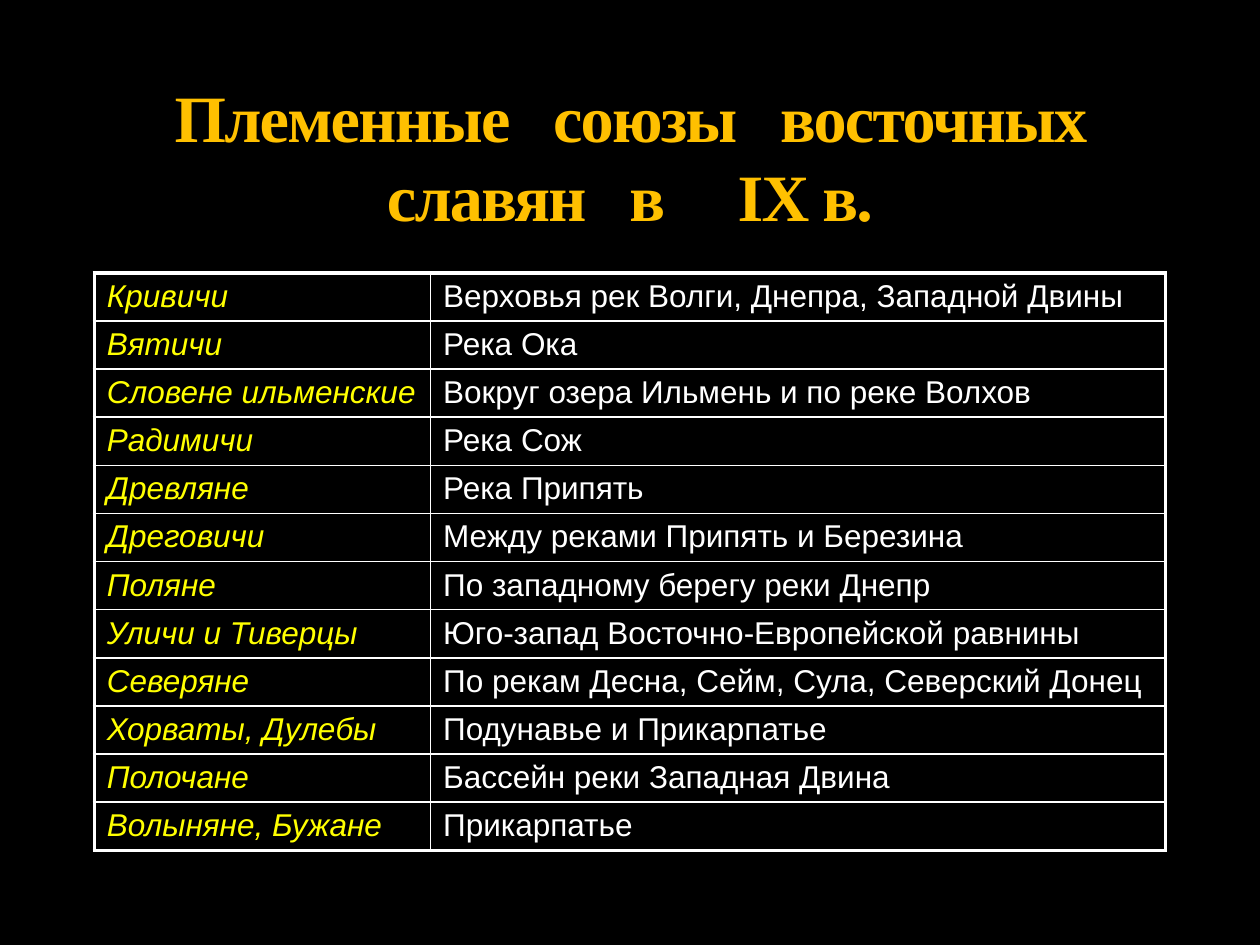
from lxml import etree
from pptx import Presentation
from pptx.dml.color import RGBColor
from pptx.enum import text
from pptx.oxml import ns
from pptx.util import Cm, Pt

COLOURS = {"night": "000000", "gold": "FFC000", "tribe": "FFFF00", "land": "FFFFFF"}
THIN, THICK = 1, 2.25

TITLE_PARTS = [
    ("Племенные", -1), (" ", 15), ("союзы", -1), (" ", 15),
    ("восточных славян", -1), (" ", 15), ("в", -1), (" ", 32), ("IX в.", -1),
]

TRIBES = [
    ("Кривичи", "Верховья рек Волги, Днепра, Западной Двины"),
    ("Вятичи", "Река Ока"),
    ("Словене ильменские", "Вокруг озера Ильмень и по реке Волхов"),
    ("Радимичи", "Река Сож"),
    ("Древляне", "Река Припять"),
    ("Дреговичи", "Между реками Припять и Березина"),
    ("Поляне", "По западному берегу реки Днепр"),
    ("Уличи и Тиверцы", "Юго-запад Восточно-Европейской равнины"),
    ("Северяне", "По рекам Десна, Сейм, Сула, Северский Донец"),
    ("Хорваты, Дулебы", "Подунавье и Прикарпатье"),
    ("Полочане", "Бассейн реки Западная Двина"),
    ("Волыняне, Бужане", "Прикарпатье"),
]


def colour(name):
    return RGBColor.from_string(COLOURS[name])


class TribeSlide:
    def __init__(self, deck):
        self.slide = deck.slides.add_slide(deck.slide_layouts[6])
        self.slide.background.fill.solid()
        self.slide.background.fill.fore_color.rgb = colour("night")

    def style(self, run, font, size, tint, bold=False, italic=False):
        run.font.name = font
        run.font.size = Pt(size)
        run.font.color.rgb = colour(tint)
        run.font.bold = bold
        run.font.italic = italic

    def title(self, parts, left, top, width, height):
        frame = self.slide.shapes.add_textbox(left, top, width, height).text_frame
        frame.word_wrap = True
        frame.vertical_anchor = text.MSO_ANCHOR.BOTTOM
        heading = frame.paragraphs[0]
        heading.alignment = text.PP_ALIGN.CENTER
        for words, spacing in parts:
            run = heading.add_run()
            run.text = words
            self.style(run, "Times New Roman", 37.8, "gold", bold=True)
            run.font._element.set("spc", str(spacing * 100))

    def borders(self, cell, widths):
        properties = cell._tc.get_or_add_tcPr()
        for position, (side, width) in enumerate(widths.items()):
            line = etree.Element(ns.qn(f"a:ln{side}"), w=str(Pt(width)))
            fill = etree.SubElement(line, ns.qn("a:solidFill"))
            etree.SubElement(fill, ns.qn("a:srgbClr"), val=COLOURS["land"])
            properties.insert(position, line)

    def table(self, rows, left, top, column_widths, row_height):
        last_row, last_column = len(rows) - 1, len(column_widths) - 1
        grid = self.slide.shapes.add_table(
            len(rows), len(column_widths), left, top,
            sum(column_widths), row_height * len(rows)).table
        for column, width in zip(grid.columns, column_widths):
            column.width = width
        for r, entries in enumerate(rows):
            grid.rows[r].height = row_height
            for c, (words, tint) in enumerate(zip(entries, ("tribe", "land"))):
                cell = grid.cell(r, c)
                cell.text_frame.text = words
                cell.margin_top = Cm(0.12)
                cell.margin_bottom = Cm(0.07)
                cell.fill.solid()
                cell.fill.fore_color.rgb = colour("night")
                self.style(cell.text_frame.paragraphs[0].runs[0],
                           "Arial", 18, tint, italic=c == 0)
                self.borders(cell, {
                    "L": THICK if c == 0 else THIN,
                    "R": THICK if c == last_column else THIN,
                    "T": THICK if r == 0 else THIN,
                    "B": THICK if r == last_row else THIN,
                })


def main():
    deck = Presentation()
    deck.slide_width, deck.slide_height = Cm(25.4), Cm(19.05)
    page = TribeSlide(deck)
    page.title(TITLE_PARTS, Cm(1.9), Cm(1.68), Cm(21.6), Cm(3.18))
    page.table(TRIBES, Cm(1.9), Cm(5.5), (Cm(6.78), Cm(14.81)), Cm(0.97))
    deck.save("out.pptx")


if __name__ == "__main__":
    main()
